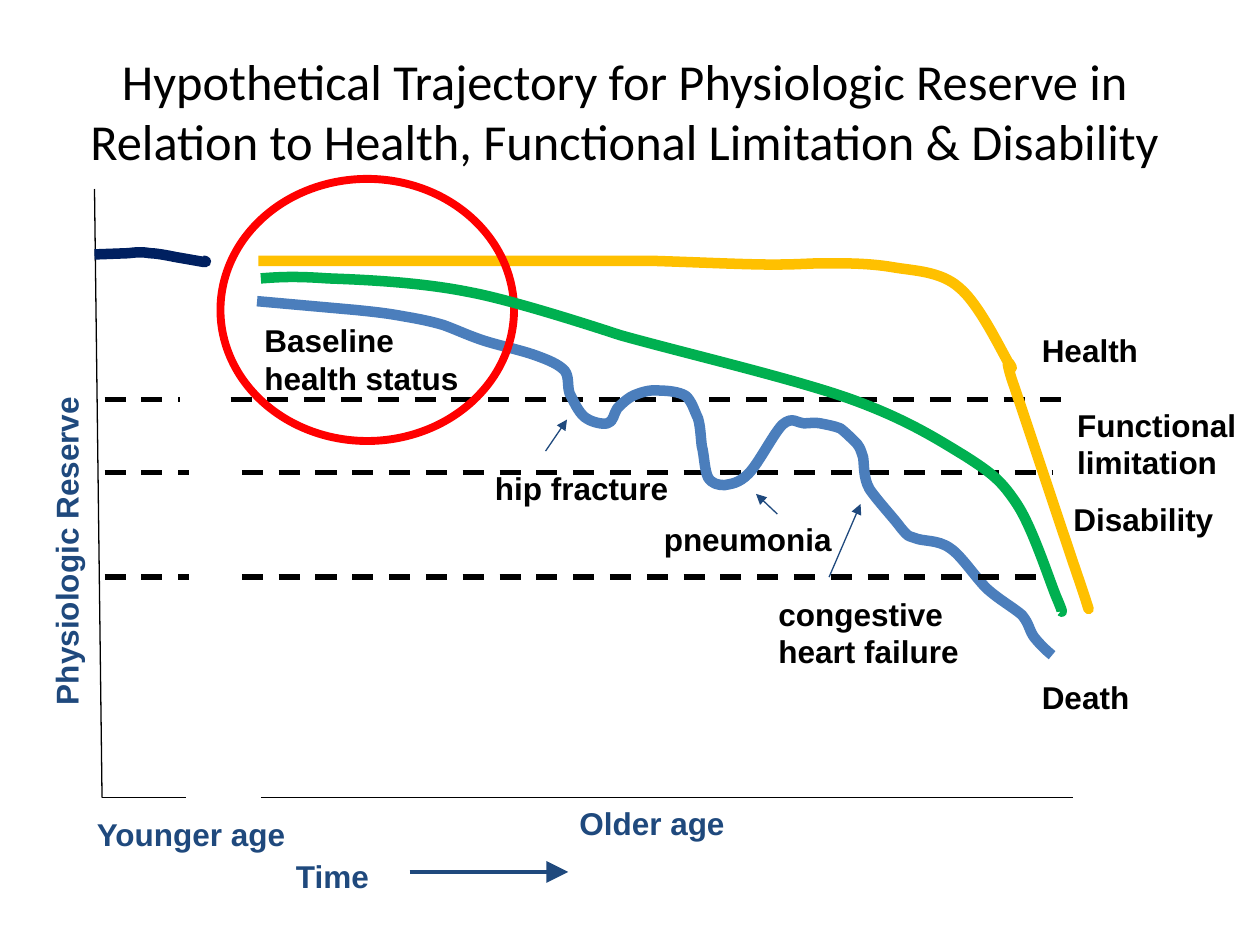
from dataclasses import dataclass

from lxml.etree import SubElement
from pptx import Presentation
from pptx.dml.color import RGBColor as RGB
from pptx.enum.dml import MSO_LINE as Dash
from pptx.enum.shapes import MSO_CONNECTOR as Conn, MSO_SHAPE as Form
from pptx.enum.text import MSO_ANCHOR as Anchor, MSO_AUTO_SIZE as Fit, PP_ALIGN as Align
from pptx.oxml.ns import qn
from pptx.util import Inches, Pt


@dataclass(frozen=True)
class Theme:
    black: str = "000000"
    blue: str = "1F497D"
    navy: str = "002060"
    steel: str = "4B7EBC"
    gold: str = "FFC000"
    green: str = "00B050"
    red: str = "FF0000"
    head: str = "Calibri"
    body: str = "Arial"
    title: float = 28.8
    label: float = 18
    thin: float = 0.75
    time: float = 2.5
    dash: float = 3
    curve: float = 6
    ring: float = 4.5


THEME = Theme()


@dataclass(frozen=True)
class Label:
    text: str
    left: float
    top: float
    width: float
    color: str = THEME.black
    height: float = 0.4
    turn: int = 0


@dataclass(frozen=True)
class Line:
    """A straight line; arrow is the size of its head, if it has one."""
    start: tuple
    end: tuple
    color: str = THEME.black
    width: float = THEME.thin
    dash: bool = False
    arrow: str = ""


@dataclass(frozen=True)
class Curve:
    """A start point, then steps: (x, y) is straight, six numbers are a cubic."""
    color: str
    start: tuple
    steps: tuple


AXES = (
    Line((0.75, 1.5), (0.81, 6.33)),
    Line((0.81, 6.33), (1.48, 6.33)),
    Line((2.07, 6.33), (8.52, 6.33)),
)
ARROWS = (
    Line((3.25, 6.92), (4.51, 6.92), THEME.blue, THEME.time, arrow="lg"),
    Line((4.33, 3.58), (4.5, 3.33), THEME.blue, arrow="med"),
    Line((6.17, 4.08), (6, 3.92), THEME.blue, arrow="med"),
    Line((6.58, 4.58), (6.83, 4), THEME.blue, arrow="med"),
)
# Each level: height, end of the young dash, start and end of the old dash
UPPER = ((3.75, 1.5, 1.92, 8.36), (3.17, 1.43, 1.83, 8.43))
LOWER = ((4.58, 1.5, 1.92, 8.36),)

LABELS = (
    Label("Younger age", 0.67, 6.42, 1.71, THEME.blue),
    Label("Older age", 4.5, 6.33, 1.37, THEME.blue),
    Label("Physiologic Reserve", -0.81, 4.16, 2.67, THEME.blue, turn=270),
    Label("Time", 2.25, 6.75, 0.79, THEME.blue),
    Label("Baseline\nhealth status", 2, 2.5, 1.76, height=0.71),
    Label("congestive\nheart failure", 6.08, 4.67, 1.65, height=0.71),
    Label("pneumonia", 5.17, 4.08, 1.55),
    Label("hip fracture", 3.83, 3.67, 1.59),
    Label("Health", 8.17, 2.58, 0.97),
    Label("Death", 8.17, 5.33, 0.9),
    Label("Functional\nlimitation", 8.45, 3.17, 1.55, height=0.71),
    Label("Disability", 8.42, 3.92, 1.32),
)

YOUNG = Curve(THEME.navy, (0.75, 2.02), (
    (1.02, 2.01), (1.1, 2, 1.13, 2, 1.19, 2.01),
    (1.25, 2.01, 1.39, 2.04, 1.39, 2.04), (1.62, 2.08),
    (1.65, 2.08, 1.63, 2.07, 1.61, 2.07),
))
FRAIL = Curve(THEME.steel, (2.04, 2.39), (
    (2.82, 2.46), (3.02, 2.48, 3.09, 2.49, 3.2, 2.51),
    (3.32, 2.53, 3.42, 2.55, 3.52, 2.58), (3.63, 2.62, 3.71, 2.66, 3.83, 2.7),
    (3.95, 2.74, 4.14, 2.78, 4.25, 2.82), (4.36, 2.86, 4.43, 2.89, 4.48, 2.94),
    (4.52, 2.99, 4.5, 3.06, 4.52, 3.12), (4.55, 3.18, 4.59, 3.27, 4.64, 3.31),
    (4.69, 3.35, 4.78, 3.37, 4.82, 3.36), (4.87, 3.35, 4.87, 3.28, 4.9, 3.24),
    (4.94, 3.2, 4.99, 3.15, 5.05, 3.13), (5.1, 3.11, 5.17, 3.09, 5.24, 3.1),
    (5.3, 3.1, 5.39, 3.11, 5.44, 3.14), (5.49, 3.18, 5.51, 3.26, 5.54, 3.32),
    (5.56, 3.39, 5.56, 3.46, 5.57, 3.54), (5.59, 3.61, 5.59, 3.73, 5.62, 3.79),
    (5.65, 3.84, 5.7, 3.85, 5.75, 3.85), (5.8, 3.84, 5.86, 3.84, 5.94, 3.76),
    (6.02, 3.68, 6.14, 3.44, 6.21, 3.37), (6.29, 3.3, 6.33, 3.36, 6.38, 3.36),
    (6.43, 3.36, 6.46, 3.35, 6.51, 3.36), (6.56, 3.37, 6.62, 3.38, 6.67, 3.4),
    (6.71, 3.43, 6.77, 3.49, 6.8, 3.52), (6.83, 3.56, 6.83, 3.57, 6.85, 3.63),
    (6.86, 3.69, 6.85, 3.79, 6.9, 3.88), (6.96, 3.97, 7.1, 4.12, 7.15, 4.19),
    (7.21, 4.26, 7.2, 4.25, 7.26, 4.27), (7.33, 4.3, 7.44, 4.28, 7.54, 4.35),
    (7.63, 4.41, 7.74, 4.58, 7.83, 4.67), (7.93, 4.76, 8.04, 4.82, 8.11, 4.88),
    (8.17, 4.95, 8.17, 5.01, 8.21, 5.06), (8.25, 5.11, 8.3, 5.16, 8.35, 5.2),
))
ROBUST = Curve(THEME.gold, (2.05, 2.07), (
    (4.12, 2.07), (5.16, 2.07), (5.5, 2.08, 5.9, 2.1, 6.13, 2.1),
    (6.36, 2.1, 6.41, 2.09, 6.56, 2.09), (6.72, 2.09, 6.9, 2.09, 7.08, 2.12),
    (7.25, 2.15, 7.46, 2.15, 7.61, 2.28), (7.77, 2.41, 7.94, 2.77, 8.01, 2.89),
    (8.08, 3.01, 7.94, 2.72, 8.03, 3.01), (8.13, 3.3, 8.47, 4.33, 8.57, 4.62),
    (8.67, 4.92, 8.64, 4.84, 8.62, 4.77),
))
STEADY = Curve(THEME.green, (2.07, 2.21), (
    (2.2, 2.2, 2.33, 2.19, 2.6, 2.21), (2.88, 2.22, 3.34, 2.24, 3.73, 2.32),
    (4.11, 2.39, 4.92, 2.66, 4.92, 2.66), (5.42, 2.8, 6.27, 3, 6.73, 3.16),
    (7.18, 3.32, 7.43, 3.48, 7.66, 3.62), (7.88, 3.76, 7.95, 3.82, 8.07, 4),
    (8.19, 4.18, 8.32, 4.58, 8.38, 4.73), (8.44, 4.87, 8.43, 4.86, 8.42, 4.85),
))


def set_line(shape, color: str, width: float) -> None:
    shape.line.color.rgb = RGB.from_string(color)
    shape.line.width = Pt(width)


def set_font(para, name: str, size: float, color: str, bold: bool = False) -> None:
    font = para.font
    font.name, font.size, font.bold = name, Pt(size), bold
    font.color.rgb = RGB.from_string(color)


def add_title(slide, text: str) -> None:
    title = slide.shapes.title
    title.left, title.top = Inches(0.44), Inches(0.25)
    title.width, title.height = Inches(9.04), Inches(1.25)
    frame = title.text_frame
    frame.text = text
    frame.auto_size, frame.vertical_anchor = Fit.NONE, Anchor.MIDDLE
    para = frame.paragraphs[0]
    para.alignment = Align.CENTER
    set_font(para, THEME.head, THEME.title, THEME.black)


def add_label(slide, label: Label) -> None:
    box = slide.shapes.add_textbox(*map(
        Inches, (label.left, label.top, label.width, label.height)))
    box.rotation = label.turn
    frame = box.text_frame
    frame.text = label.text
    frame.word_wrap, frame.auto_size = False, Fit.SHAPE_TO_FIT_TEXT
    for para in frame.paragraphs:
        set_font(para, THEME.body, THEME.label, label.color, True)


def add_line(slide, line: Line) -> None:
    conn = slide.shapes.add_connector(
        Conn.STRAIGHT, *map(Inches, line.start + line.end))
    set_line(conn, line.color, line.width)
    if line.dash:
        conn.line.dash_style = Dash.DASH
    props = conn._element.spPr
    if line.arrow:
        SubElement(props.find(qn("a:ln")), qn("a:tailEnd"),
                   type="triangle", w=line.arrow, len=line.arrow)
    SubElement(props, qn("a:effectLst"))


def add_level(slide, level: tuple) -> None:
    y, young, old, end = level
    for left, right in ((0.83, young), (old, end)):
        add_line(slide, Line((left, y), (right, y), width=THEME.dash, dash=True))


def bend(shape, steps: tuple) -> None:
    """Turn the straight segments that have control points into cubics."""
    for node, step in zip(list(shape._element.iter(qn("a:lnTo"))), steps):
        if len(step) == 6:
            node.clear()
            node.tag = qn("a:cubicBezTo")
            for x, y in zip(step[::2], step[1::2]):
                SubElement(node, qn("a:pt"), x=str(Inches(x) - shape.left),
                           y=str(Inches(y) - shape.top))


def add_curve(slide, curve: Curve) -> None:
    pen = slide.shapes.build_freeform(*map(Inches, curve.start))
    ends = [tuple(map(Inches, step[-2:])) for step in curve.steps]
    pen.add_line_segments(ends, close=False)
    shape = pen.convert_to_shape()
    bend(shape, curve.steps)
    finish(shape, curve.color, THEME.curve)


def add_ring(slide) -> None:
    ring = slide.shapes.add_shape(Form.OVAL, *map(Inches, (1.75, 1.42, 2.33, 2.08)))
    finish(ring, THEME.red, THEME.ring)


def finish(shape, color: str, width: float) -> None:
    """Leave only the outline."""
    shape.shadow.inherit = False
    shape.fill.background()
    set_line(shape, color, width)


def main() -> None:
    deck = Presentation()
    deck.slide_width, deck.slide_height = Inches(10), Inches(7.5)
    slide = deck.slides.add_slide(deck.slide_layouts[5])
    add_title(slide, "Hypothetical Trajectory for Physiologic Reserve in "
                     "Relation to Health, Functional Limitation & Disability")
    for line in AXES + ARROWS:
        add_line(slide, line)
    for level in UPPER:
        add_level(slide, level)
    for label in LABELS:
        add_label(slide, label)
    for curve in (YOUNG, FRAIL):
        add_curve(slide, curve)
    for level in LOWER:
        add_level(slide, level)
    add_curve(slide, ROBUST)
    add_ring(slide)
    add_curve(slide, STEADY)
    deck.save("out.pptx")


if __name__ == "__main__":
    main()
